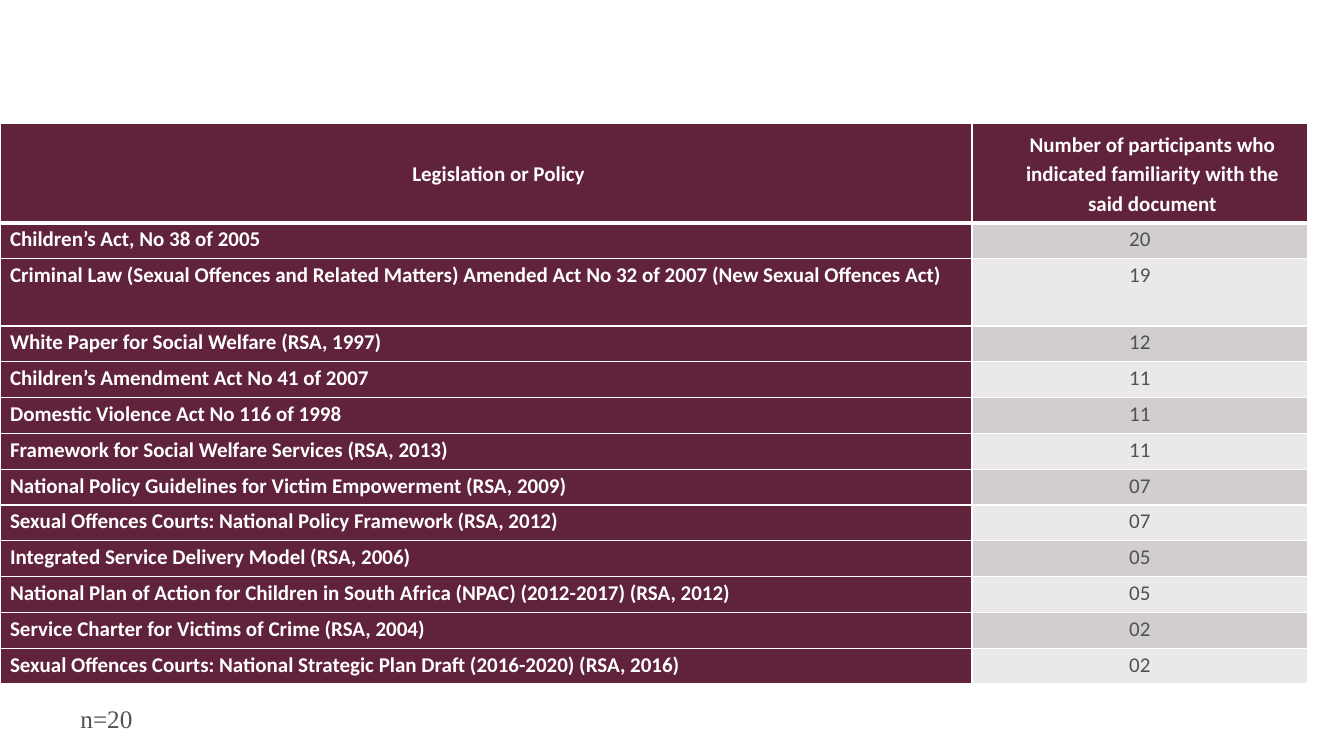
from dataclasses import dataclass

from lxml import etree
from pptx import Presentation
from pptx import util as u
from pptx.dml.color import RGBColor
from pptx.enum import text
from pptx.oxml.ns import qn


@dataclass(frozen=True)
class Theme:
    plum: str = "61223B"
    white: str = "FFFFFF"
    ink: str = "4D5356"
    bands: tuple = ("D2CDCE", "EAE8E8")
    table_font: str = "Calibri"
    note_font: str = "Times New Roman"
    table_size: int = 15
    note_size: int = 18


class SlideBuilder:
    def __init__(self, slide, theme):
        self.slide = slide
        self.theme = theme

    def add_text(self, paragraph, words, font, size, color, bold=False):
        run = paragraph.add_run()
        run.text = words
        run.font.name = font
        run.font.size = u.Pt(size)
        run.font.bold = bold
        run.font.color.rgb = RGBColor.from_string(color)

    def border(self, cell, side, width):
        properties = cell._tc.get_or_add_tcPr()
        line = etree.SubElement(properties, qn(f"a:ln{side}"), w=str(u.Pt(width)))
        fill = etree.SubElement(line, qn("a:solidFill"))
        etree.SubElement(fill, qn("a:srgbClr"), val=self.theme.white)

    def cell(self, cell, words, fill, color, bold, centered, header, below_header):
        # Borders come before the fill in the cell properties
        for side in "LRTB":
            thick = (header and side == "B") or (below_header and side == "T")
            self.border(cell, side, 3 if thick else 1)
        cell.fill.solid()
        cell.fill.fore_color.rgb = RGBColor.from_string(fill)
        cell.margin_left = cell.margin_right = u.Inches(0.1)
        cell.margin_top = cell.margin_bottom = 0
        cell.vertical_anchor = text.MSO_ANCHOR.MIDDLE if header else text.MSO_ANCHOR.TOP

        paragraph = cell.text_frame.paragraphs[0]
        paragraph.alignment = text.PP_ALIGN.CENTER if centered else text.PP_ALIGN.LEFT
        paragraph.line_spacing = 1.15
        paragraph.space_after = u.Pt(10 if header else 3)
        if header:
            paragraph._p.get_or_add_pPr().set("marL", str(u.Inches(0.25)))
        self.add_text(paragraph, words, self.theme.table_font, self.theme.table_size, color, bold)

    def table(self, rows, left, top, widths, heights):
        frame = self.slide.shapes.add_table(
            len(rows), len(widths), u.Inches(left), u.Inches(top),
            u.Inches(sum(widths)), u.Inches(sum(heights)))
        table = frame.table
        for column, width in zip(table.columns, widths):
            column.width = u.Inches(width)
        for row, height in zip(table.rows, heights):
            row.height = u.Inches(height)
        for i, row in enumerate(rows):
            for j, words in enumerate(row):
                header = i == 0
                dark = header or j == 0
                fill = self.theme.plum if dark else self.theme.bands[(i - 1) % 2]
                color = self.theme.white if dark else self.theme.ink
                self.cell(table.cell(i, j), words, fill, color, bold=dark,
                          centered=header or j == 1, header=header, below_header=i == 1)

    def note(self, words, left, top, width, height):
        box = self.slide.shapes.add_textbox(*map(u.Inches, (left, top, width, height)))
        frame = box.text_frame
        frame.word_wrap = True
        frame.auto_size = text.MSO_AUTO_SIZE.SHAPE_TO_FIT_TEXT
        paragraph = frame.paragraphs[0]
        paragraph.alignment = text.PP_ALIGN.JUSTIFY
        paragraph.line_spacing = 1.5
        paragraph.space_after = u.Pt(10)
        self.add_text(paragraph, words, self.theme.note_font, self.theme.note_size, self.theme.ink)


HEADER = ("Legislation or Policy",
          "Number of participants who indicated familiarity with the said document")
POLICIES = [
    ("Children’s Act, No 38 of 2005", "20"),
    ("Criminal Law (Sexual Offences and Related Matters) Amended Act No 32 of 2007 "
     "(New Sexual Offences Act)", "19"),
    ("White Paper for Social Welfare (RSA, 1997)", "12"),
    ("Children’s Amendment Act No 41 of 2007", "11"),
    ("Domestic Violence Act No 116 of 1998", "11"),
    ("Framework for Social Welfare Services (RSA, 2013)", "11"),
    ("National Policy Guidelines for Victim Empowerment (RSA, 2009)", "07"),
    ("Sexual Offences Courts: National Policy Framework (RSA, 2012)", "07"),
    ("Integrated Service Delivery Model (RSA, 2006)", "05"),
    ("National Plan of Action for Children in South Africa (NPAC) (2012-2017) (RSA, 2012)", "05"),
    ("Service Charter for Victims of Crime (RSA, 2004)", "02"),
    ("Sexual Offences Courts: National Strategic Plan Draft (2016-2020) (RSA, 2016)", "02"),
]


def main():
    presentation = Presentation()
    presentation.slide_width = u.Inches(13.33)
    presentation.slide_height = u.Inches(7.5)
    slide = presentation.slides.add_slide(presentation.slide_layouts[6])
    builder = SlideBuilder(slide, Theme())

    # Familiarity table: a header, one tall row, the rest share the height equally
    table_height, header_height, tall_height = 5.57, 0.99, 0.67
    row_height = (table_height - header_height - tall_height) / (len(POLICIES) - 1)
    heights = [header_height] + [row_height] * len(POLICIES)
    heights[2] = tall_height
    builder.table([HEADER] + POLICIES, 0, 1.22, (9.64, 3.33), heights)

    # Sample size
    builder.note("n=20", 0.7, 6.78, 6.67, 0.5)

    presentation.save("out.pptx")


if __name__ == "__main__":
    main()
